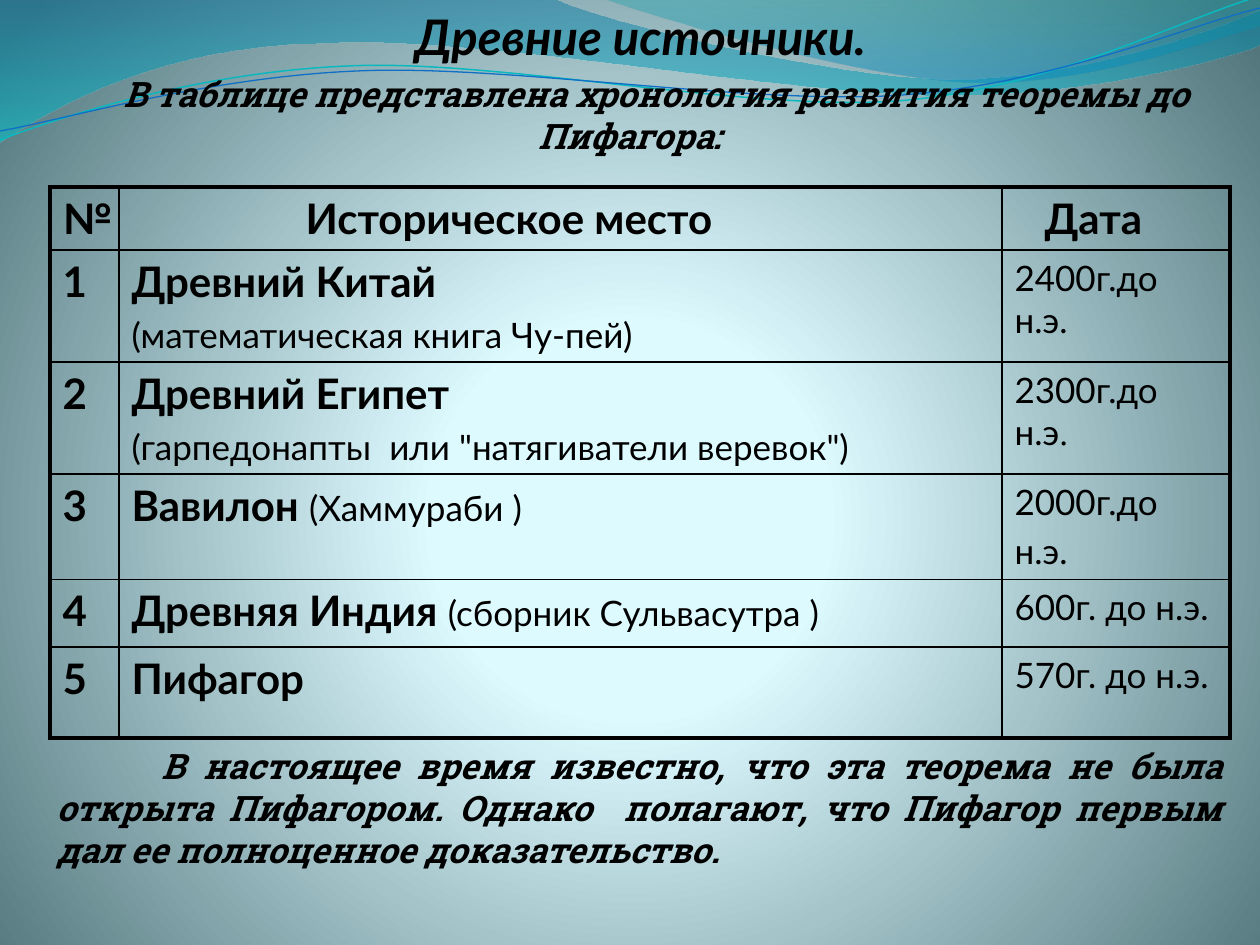
"""Build the slide about the history of the theorem before Pythagoras."""
import math

from lxml import etree
from pptx import Presentation
from pptx.dml.color import RGBColor
from pptx.enum import text
from pptx.oxml import ns
from pptx.util import Emu, Pt

PX = 9144000 / 1260
BLACK = RGBColor(0x00, 0x00, 0x00)
TEAL = RGBColor(0x0A, 0xB8, 0xBF)
BLUE = RGBColor(0x0F, 0x6F, 0xC6)
SKY, PALE, SLATE = (RGBColor.from_string(c) for c in ("DEFBFF", "DDFAFF", "52767C"))
DEEP, CYAN, SEA, AZURE = (
    RGBColor.from_string(c) for c in ("0074A1", "00C6CF", "00A1A9", "008BBF"))

HEAD = {"size": 24, "bold": True, "name": "Lato"}
PLAIN = {"size": 20, "bold": False, "name": "Lato"}
TITLE = {"size": 28, "bold": True, "italic": True, "name": "Lato"}
SLAB = {"size": 20, "bold": True, "italic": True, "name": "Roboto Slab"}
TIMES = {"size": 20, "bold": False, "name": "Times New Roman"}
GAP = (" ", {**PLAIN, "size": 24})

BACKDROP = [(0, SKY, 100), (25, PALE, 100), (100, SLATE, 100)]
WAVES = [
    ((0, 0), [(554, -1), (600, 21, 837, 79, 955, 79), (1075, 79, 1207, 33, 1260, 11),
              (1261, 45), (1239, 55, 1096, 96, 940, 95), (784, 95, 481, 35, 324, 43),
              (163, 45, 58, 105, -1, 142), (0, 0)],
     [(0, DEEP, 45), (100, CYAN, 55)]),
    ((604, -1), [(641, 14, 859, 78, 969, 82), (1079, 87, 1211, 40, 1260, 26),
                 (1260, 0), (604, -1)],
     [(0, SEA, 30), (80, AZURE, 45)]),
]
TILT = 357.3
RIPPLES = [
    ((0, 140), [(60, 117, 199, 72, 349, 66), (498, 59, 747, 112, 898, 101),
                (1050, 89, 1182, 19, 1257, -3)], (629, 72), TEAL, 0.85),
    ((0, 131), [(59, 121, 207, 77, 357, 71), (508, 64, 752, 106, 903, 95),
                (1053, 84, 1186, 26, 1260, 8)], (629, 74), BLUE, 0.75),
]

CENTER, JUSTIFY = text.PP_ALIGN.CENTER, text.PP_ALIGN.JUSTIFY
HEADING = [
    ([("Древние источники.", TITLE)], {"alignment": CENTER}, 22),
    ([("В таблице представлена\u00a0хронология развития теоремы до Пифагора:", SLAB)],
     {"alignment": CENTER, "space_before": Pt(4.5)}, 54),
]
CONCLUSION = [
    ([("В настоящее время известно, что эта теорема не была открыта Пифагором. "
       "Однако  полагают, что Пифагор первым дал ее полноценное доказательство.", SLAB)],
     {"alignment": JUSTIFY}, 105),
]

HEADER = [("№", 0), ("Историческое место", 174), ("Дата", 30)]
SOURCES = [
    ([[("Древний Китай", HEAD)], [("(математическая книга Чу-пей)", PLAIN)]],
     [("2400г.до н.э.", PLAIN)]),
    ([[("Древний Египет", HEAD)],
      [("(гарпедонапты \u00a0или \"натягиватели веревок\")", PLAIN)]],
     [("2300г.до н.э", PLAIN), (".", TIMES)]),
    ([[("Вавилон ", HEAD), ("(Хаммураби )", PLAIN)]], [("2000г.до н.э.", PLAIN), GAP]),
    ([[("Древняя Индия ", HEAD), ("(сборник Сульвасутра )", PLAIN)]],
     [("600г. до н.э.", PLAIN)]),
    ([[("Пифагор", HEAD)]], [("570г. до н.э.", PLAIN)]),
]
COLUMNS = [69, 883, 228]
ROWS = [63, 112, 112, 105, 68, 91]


def px(length):
    return Emu(round(length * PX))


def child(parent, tag, **attributes):
    return etree.SubElement(parent, ns.qn(tag), {k: str(v) for k, v in attributes.items()})


def paint_gradient(fill, holder, stops, circle=False):
    fill.gradient()
    gradient = next(holder.iter(ns.qn("a:gradFill")))
    for old in list(gradient):
        gradient.remove(old)
    stop_list = child(gradient, "a:gsLst")
    for position, color, opacity in stops:
        stop = child(stop_list, "a:gs", pos=position * 1000)
        tint = child(stop, "a:srgbClr", val=color)
        if opacity < 100:
            child(tint, "a:alpha", val=opacity * 1000)
    if circle:
        focus = child(gradient, "a:path", path="circle")
        child(focus, "a:fillToRect", l=10000, t=110000, r=10000, b=100000)
    else:
        child(gradient, "a:lin", ang=5400000, scaled=1)


def turn(point, center, degrees):
    angle = math.radians(degrees)
    x, y = (p - c for p, c in zip(point, center))
    return (center[0] + x * math.cos(angle) - y * math.sin(angle),
            center[1] + x * math.sin(angle) + y * math.cos(angle))


def add_curve(slide, start, segments, close, center=(0, 0), tilt=0):
    points = [start] + [s[i:i + 2] for s in segments for i in range(0, len(s), 2)]
    first, *rest = [tuple(map(px, turn(p, center, -tilt))) for p in points]
    builder = slide.shapes.build_freeform(*first, scale=1.0)
    builder.add_line_segments(rest, close=close)
    curve = builder.convert_to_shape()
    curve.shadow.inherit = False
    curve.rotation = tilt
    strokes = iter(list(curve.element.iter(ns.qn("a:lnTo"))))
    for segment in segments:
        stroke = next(strokes)
        if len(segment) == 6:
            stroke.addprevious(bend := etree.Element(ns.qn("a:cubicBezTo")))
            for part in (stroke, next(strokes), next(strokes)):
                bend.append(part[0])
                part.getparent().remove(part)
    return curve


def write(frame, paragraphs):
    for index, (runs, layout, indent) in enumerate(paragraphs):
        paragraph = frame.add_paragraph() if index else frame.paragraphs[0]
        for key, value in layout.items():
            setattr(paragraph, key, value)
        if indent:
            paragraph._p.get_or_add_pPr().set("indent", str(px(indent)))
        for words, style in runs:
            run = paragraph.add_run()
            run.text = words
            run.font.color.rgb = BLACK
            for key, value in style.items():
                setattr(run.font, key, Pt(value) if key == "size" else value)


def add_text(slide, box, paragraphs):
    frame = slide.shapes.add_textbox(*map(px, box)).text_frame
    frame.word_wrap = True
    write(frame, paragraphs)


def draw_borders(cell, row, column):
    edges = {"L": column == 0, "R": column == len(COLUMNS) - 1,
             "T": row == 0, "B": row == len(ROWS) - 1}
    properties = cell._tc.get_or_add_tcPr()
    for side, outer in edges.items():
        line = child(properties, f"a:ln{side}", w=Pt(2.25 if outer else 1))
        child(child(line, "a:solidFill"), "a:srgbClr", val=BLACK)


def add_sources(slide):
    grid = slide.shapes.add_table(len(ROWS), len(COLUMNS), px(50), px(187),
                                  px(sum(COLUMNS)), px(sum(ROWS))).table
    grid.first_row = grid.horz_banding = False
    for column, width in zip(grid.columns, COLUMNS):
        column.width = px(width)
    for row, height in zip(grid.rows, ROWS):
        row.height = px(height)
    content = [[([[(words, HEAD)]], indent) for words, indent in HEADER]]
    for number, (place, date) in enumerate(SOURCES, 1):
        content.append([([[(str(number), HEAD)]], 0), (place, 0), ([date], 0)])
    for r, cells in enumerate(content):
        for c, (lines, indent) in enumerate(cells):
            cell = grid.cell(r, c)
            write(cell.text_frame, [(runs, {"space_before": Pt(runs[0][1]["size"] * 0.2)}, indent)
                                    for runs in lines])
            draw_borders(cell, r, c)
            cell.fill.background()


def main():
    deck = Presentation()
    deck.slide_width, deck.slide_height = px(1260), px(945)
    slide = deck.slides.add_slide(deck.slide_layouts[6])
    paint_gradient(slide.background.fill, slide.element, BACKDROP, circle=True)
    for start, segments, stops in WAVES:
        wave = add_curve(slide, start, segments, True)
        paint_gradient(wave.fill, wave.element, stops)
        wave.line.fill.background()
    for start, segments, center, color, width in RIPPLES:
        ripple = add_curve(slide, start, segments, False, center, TILT)
        ripple.fill.background()
        ripple.line.color.rgb = color
        ripple.line.width = Pt(width)
    add_text(slide, (29, 0, 1201, 165), HEADING)
    add_sources(slide)
    add_text(slide, (44, 738, 1191, 149), CONCLUSION)
    deck.save("out.pptx")


if __name__ == "__main__":
    main()
